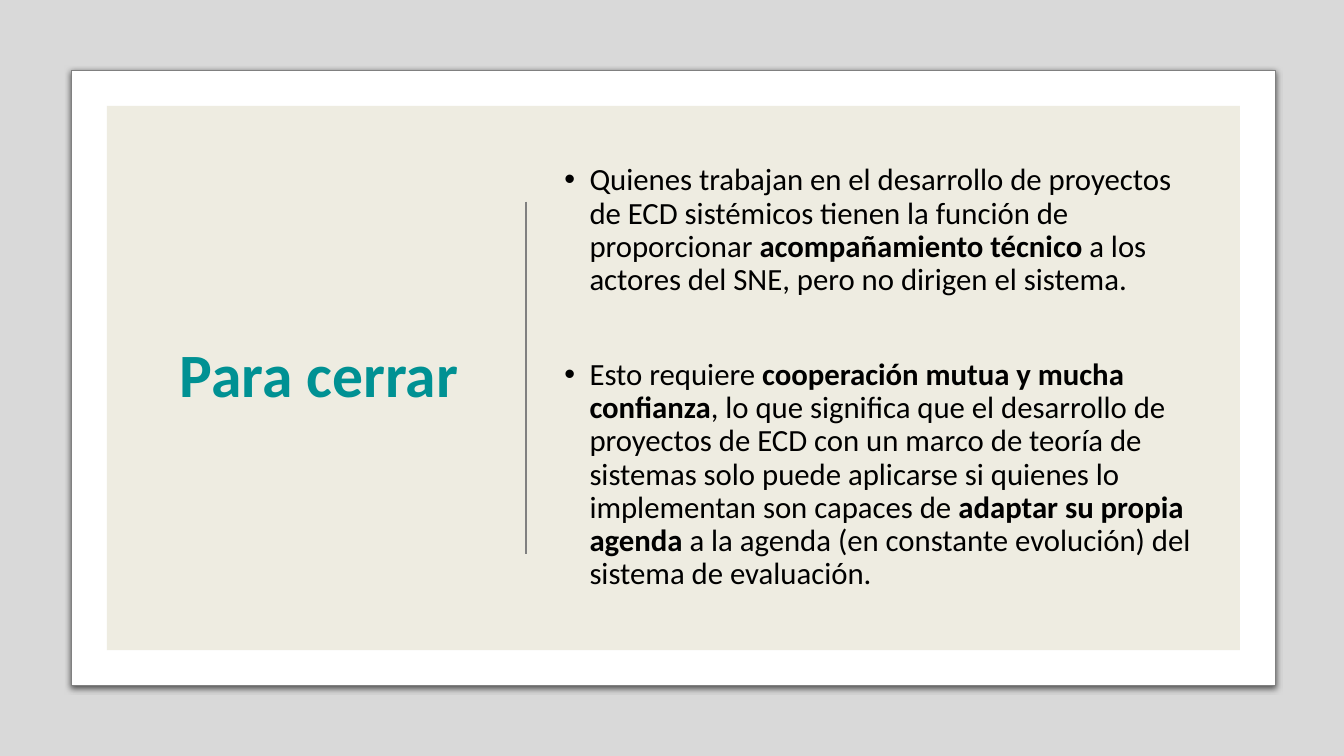
import pptx
import pptx.dml.color
import pptx.enum.shapes
import pptx.enum.text
import pptx.oxml
import pptx.oxml.ns
import pptx.util
from lxml import etree

Pt = pptx.util.Pt
Shape = pptx.enum.shapes.MSO_SHAPE
Align = pptx.enum.text.PP_ALIGN
qn = pptx.oxml.ns.qn

WIDTH, HEIGHT = 960, 540
FONT = "Calibri"
COLORS = {"back": "D9D9D9", "card": "FFFFFF", "panel": "EEECE1",
          "rule": "808080", "title": "009193", "text": "000000"}
POINTS = [
    [("Quienes trabajan en el desarrollo de proyectos de ECD sistémicos "
      "tienen la función de proporcionar ", False),
     ("acompañamiento técnico ", True),
     ("a los actores del SNE, pero no dirigen el sistema.", False)],
    [("Esto requiere ", False),
     ("cooperación mutua y mucha confianza", True),
     (", lo que significa que el desarrollo de proyectos de ECD con un marco "
      "de teoría de sistemas solo puede aplicarse si quienes lo implementan "
      "son capaces de ", False),
     ("adaptar su propia agenda", True),
     (" a la agenda (en constante evolución) del sistema de evaluación.",
      False)],
]


def color(name):
    return pptx.dml.color.RGBColor.from_string(COLORS[name])


def add_rect(slide, box, fill, line=None):
    rect = slide.shapes.add_shape(Shape.RECTANGLE, *map(Pt, box))
    rect.shadow.inherit = False
    rect.fill.solid()
    rect.fill.fore_color.rgb = color(fill)
    if line:
        rect.line.color.rgb = color(line)
        rect.line.width = Pt(0.75)
    else:
        rect.line.fill.background()
    return rect


def add_shadow(shape):
    effects = shape._element.spPr.find(qn("a:effectLst"))
    shadow = etree.SubElement(
        effects, qn("a:outerShdw"), blurRad=str(Pt(4.5)), dist=str(Pt(1.5)),
        dir="5400000", algn="t", rotWithShape="0")
    tint = etree.SubElement(shadow, qn("a:srgbClr"), val=COLORS["text"])
    etree.SubElement(tint, qn("a:alpha"), val="63000")


def add_frame(slide, box):
    left, top, width, height = box
    edge = 25.3
    add_rect(slide, (0, 0, WIDTH, HEIGHT), "back")
    add_shadow(add_rect(slide, box, "card", "rule"))
    inner = (left + edge, top + edge, width - 2 * edge, height - 2 * edge)
    add_rect(slide, inner, "panel")


def add_box(slide, box):
    frame = slide.shapes.add_textbox(*map(Pt, box)).text_frame
    frame.word_wrap = True
    frame.vertical_anchor = pptx.enum.text.MSO_ANCHOR.MIDDLE
    return frame


def add_run(para, text, size, tone, bold):
    run = para.add_run()
    run.text = text
    run.font.name = FONT
    run.font.size = Pt(size)
    run.font.bold = bold
    run.font.color.rgb = color(tone)


def add_title(slide, box):
    para = add_box(slide, box).paragraphs[0]
    para.alignment = Align.CENTER
    para.line_spacing = 0.9
    add_run(para, "Para cerrar", 44, "title", True)


def add_rule(slide, box):
    left, top, width, height = box
    rule = slide.shapes.add_connector(
        pptx.enum.shapes.MSO_CONNECTOR.STRAIGHT,
        Pt(left), Pt(top), Pt(left + width), Pt(top + height))
    rule.line.color.rgb = color("rule")
    rule.line.width = Pt(1.5)
    etree.SubElement(rule._element.spPr, qn("a:effectLst"))


def add_points(slide, box):
    frame = add_box(slide, box)
    for index, runs in enumerate(POINTS):
        para = frame.add_paragraph() if index else frame.paragraphs[0]
        para.line_spacing = 0.9
        if index:
            para.space_before = Pt(44)
        props = para._p.get_or_add_pPr()
        props.set("marL", str(Pt(18)))
        props.set("indent", str(-Pt(18)))
        etree.SubElement(props, qn("a:buFont"), typeface="Arial")
        etree.SubElement(props, qn("a:buChar"), char="•")
        for text, bold in runs:
            add_run(para, text, 22, "text", bold)


def main():
    deck = pptx.Presentation()
    deck.slide_width, deck.slide_height = Pt(WIDTH), Pt(HEIGHT)
    slide = deck.slides.add_slide(deck.slide_layouts[6])
    add_frame(slide, (51, 50.4, 860, 439.2))
    add_title(slide, (101.5, 108, 252.7, 324))
    add_rule(slide, (375.8, 144, 0, 252))
    add_points(slide, (396, 108, 462.2, 324))
    deck.save("out.pptx")


if __name__ == "__main__":
    main()
